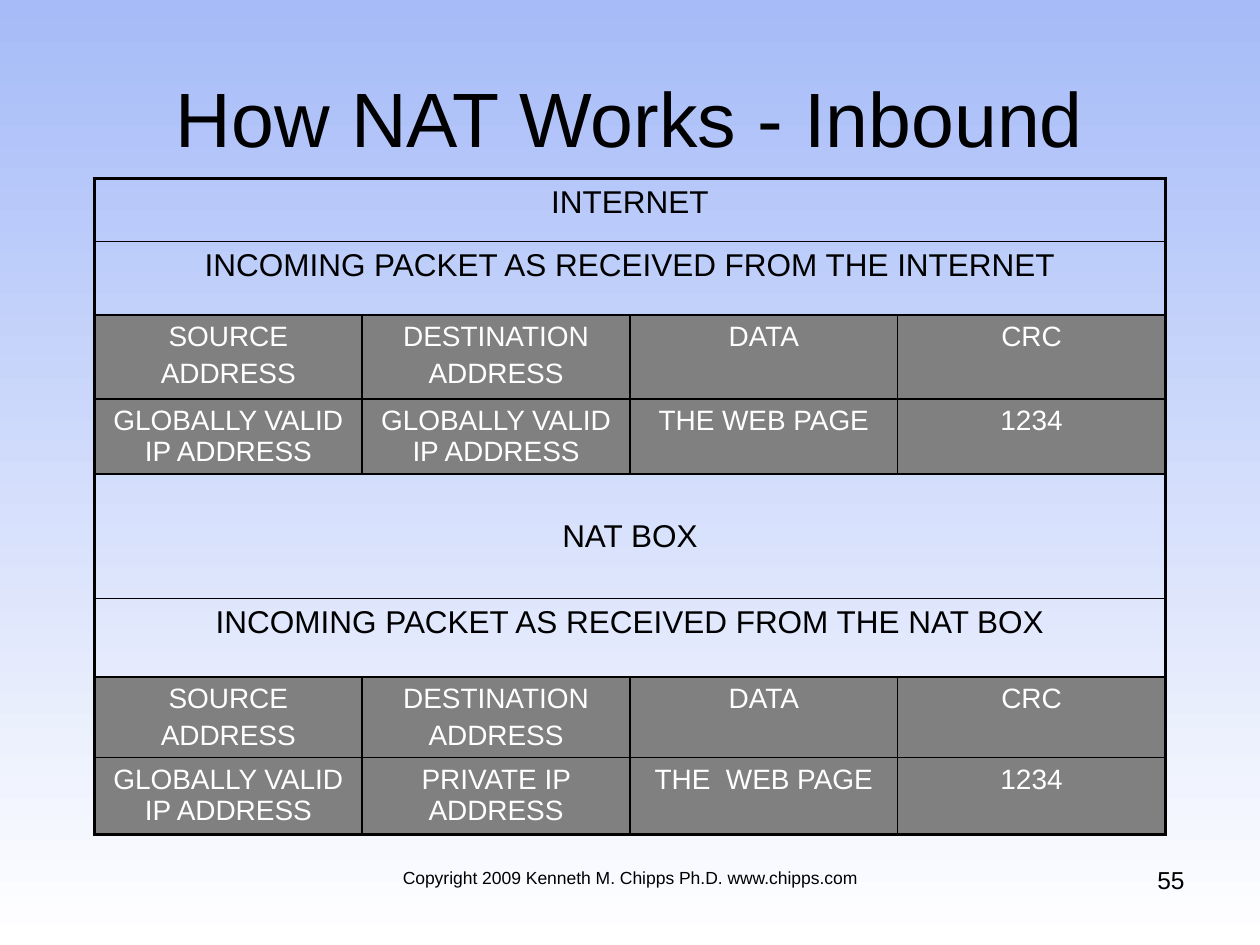
from lxml.etree import SubElement
from pptx import Presentation
from pptx.dml.color import RGBColor
from pptx.enum.text import MSO_ANCHOR, PP_ALIGN
from pptx.oxml.ns import qn
from pptx.util import Pt

BLACK, WHITE, GRAY, SKY = "000000", "FFFFFF", "808080", "A6BBF8"
THIN, THICK = 1, 2.25


def color(code):
    return RGBColor.from_string(code)


class Deck:
    font = "Arial"

    def __init__(self, width, height):
        self.prs = Presentation()
        self.prs.slide_width, self.prs.slide_height = Pt(width), Pt(height)
        self.slide = self.prs.slides.add_slide(self.prs.slide_layouts[5])

    def backdrop(self, top, bottom):
        fill = self.slide.background.fill
        fill.gradient()
        fill.gradient_angle = 270
        for stop, code, pos in zip(fill.gradient_stops, (top, bottom), (0, 1)):
            stop.color.rgb, stop.position = color(code), pos

    def set_text(self, frame, text, size, code=BLACK, align=PP_ALIGN.CENTER):
        frame.text = text
        frame.word_wrap = True
        for i, para in enumerate(frame.paragraphs):
            para.alignment = align
            para.space_before = Pt(0.2 * size if i else 0)
            para.font.name, para.font.size = self.font, Pt(size)
            para.font.color.rgb = color(code)

    def title(self, text, box, size):
        shape = self.slide.shapes.title
        shape.left, shape.top, shape.width, shape.height = map(Pt, box)
        shape.text_frame.vertical_anchor = MSO_ANCHOR.MIDDLE
        self.set_text(shape.text_frame, text, size)

    def label(self, text, box, size, align):
        shape = self.slide.shapes.add_textbox(*map(Pt, box))
        self.set_text(shape.text_frame, text, size, align=align)

    def border(self, cell, widths):
        props = cell._tc.get_or_add_tcPr()
        for i, (side, width) in enumerate(zip("LRTB", widths)):
            line = props.makeelement(qn(f"a:ln{side}"), {"w": str(Pt(width))})
            fill = SubElement(line, qn("a:solidFill"))
            SubElement(fill, qn("a:srgbClr"), val=BLACK)
            props.insert(i, line)

    def table(self, rows, heights, box):
        count = max(map(len, rows))
        shape = self.slide.shapes.add_table(len(rows), count, *map(Pt, box))
        grid = shape.table
        grid.first_row = grid.horz_banding = False
        for r, (texts, height) in enumerate(zip(rows, heights)):
            grid.rows[r].height = Pt(height)
            band = len(texts) == 1
            if band:
                grid.cell(r, 0).merge(grid.cell(r, count - 1))
            for c in range(count):
                cell = grid.cell(r, c)
                if band:
                    cell.fill.background()
                else:
                    cell.fill.solid()
                    cell.fill.fore_color.rgb = color(GRAY)
                edges = (c == 0, band or c == count - 1,
                         r == 0, r == len(rows) - 1)
                self.border(cell, [THICK if edge else THIN for edge in edges])
            for c, text in enumerate(texts):
                size, code = (18, BLACK) if band else (16, WHITE)
                self.set_text(grid.cell(r, c).text_frame, text, size, code)
        return grid


def main():
    deck = Deck(720, 540)
    deck.backdrop(SKY, WHITE)
    deck.title("How NAT Works - Inbound", (36, 21.6, 648, 90), 44)

    # Packet fields on both sides of the NAT box
    head = ["SOURCE\nADDRESS", "DESTINATION\nADDRESS", "DATA", "CRC"]
    valid = "GLOBALLY VALID IP ADDRESS"
    rows = [
        ["INTERNET"],
        ["INCOMING PACKET AS RECEIVED FROM THE INTERNET"],
        head,
        [valid, valid, "THE WEB PAGE", "1234"],
        ["NAT BOX"],
        ["INCOMING PACKET AS RECEIVED FROM THE NAT BOX"],
        head,
        [valid, "PRIVATE IP ADDRESS", "THE  WEB PAGE", "1234"],
    ]
    heights = [36, 42, 48, 43, 71, 45, 46, 44]
    grid = deck.table(rows, heights, (54, 102, 612, sum(heights)))
    grid.cell(4, 0).vertical_anchor = MSO_ANCHOR.MIDDLE

    # Footer
    deck.label("Copyright 2009 Kenneth M. Chipps Ph.D. www.chipps.com",
               (216, 492, 288, 37.5), 10, PP_ALIGN.CENTER)
    deck.label("55", (516, 490.5, 168, 37.5), 14, PP_ALIGN.RIGHT)

    deck.prs.save("out.pptx")


if __name__ == "__main__":
    main()
